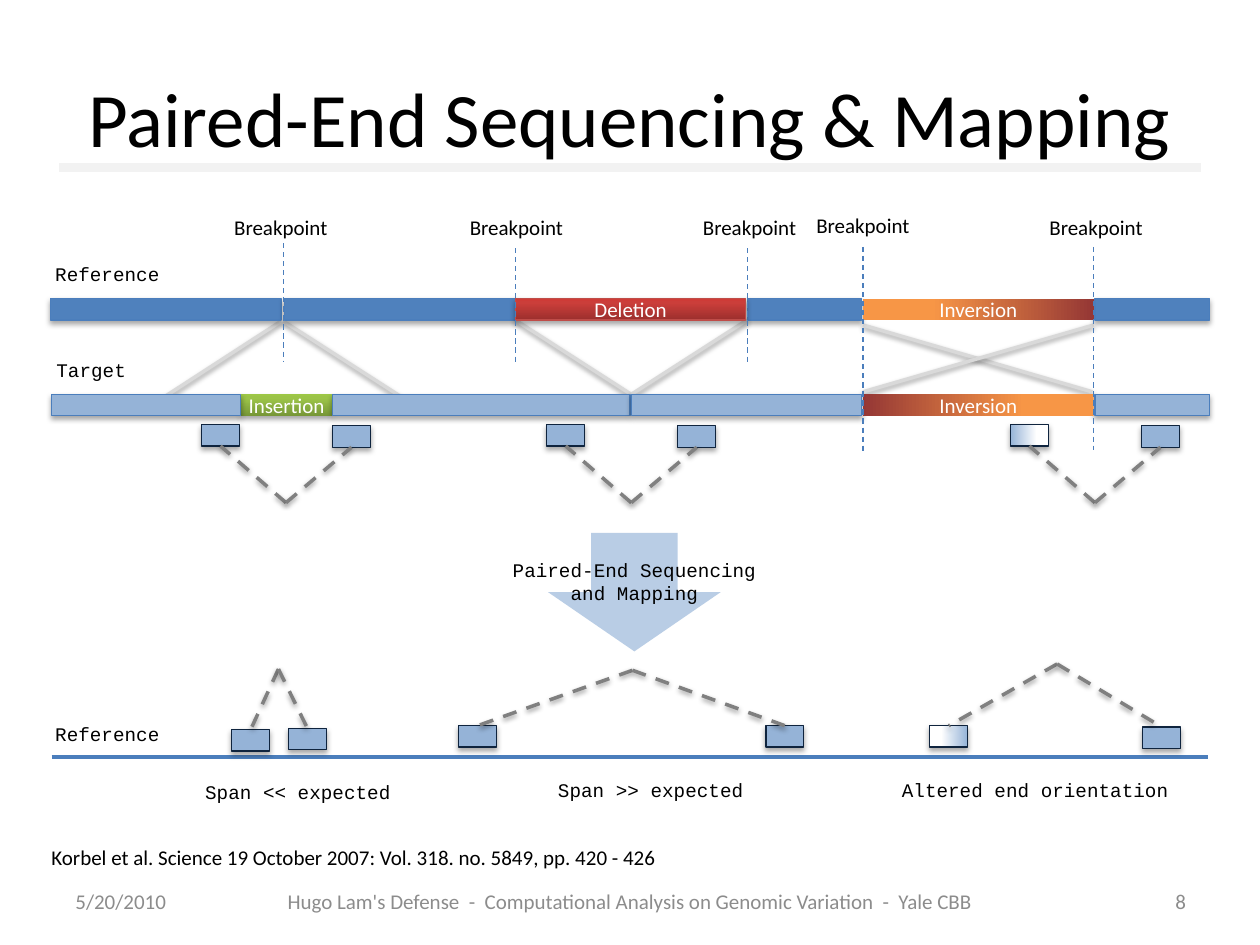
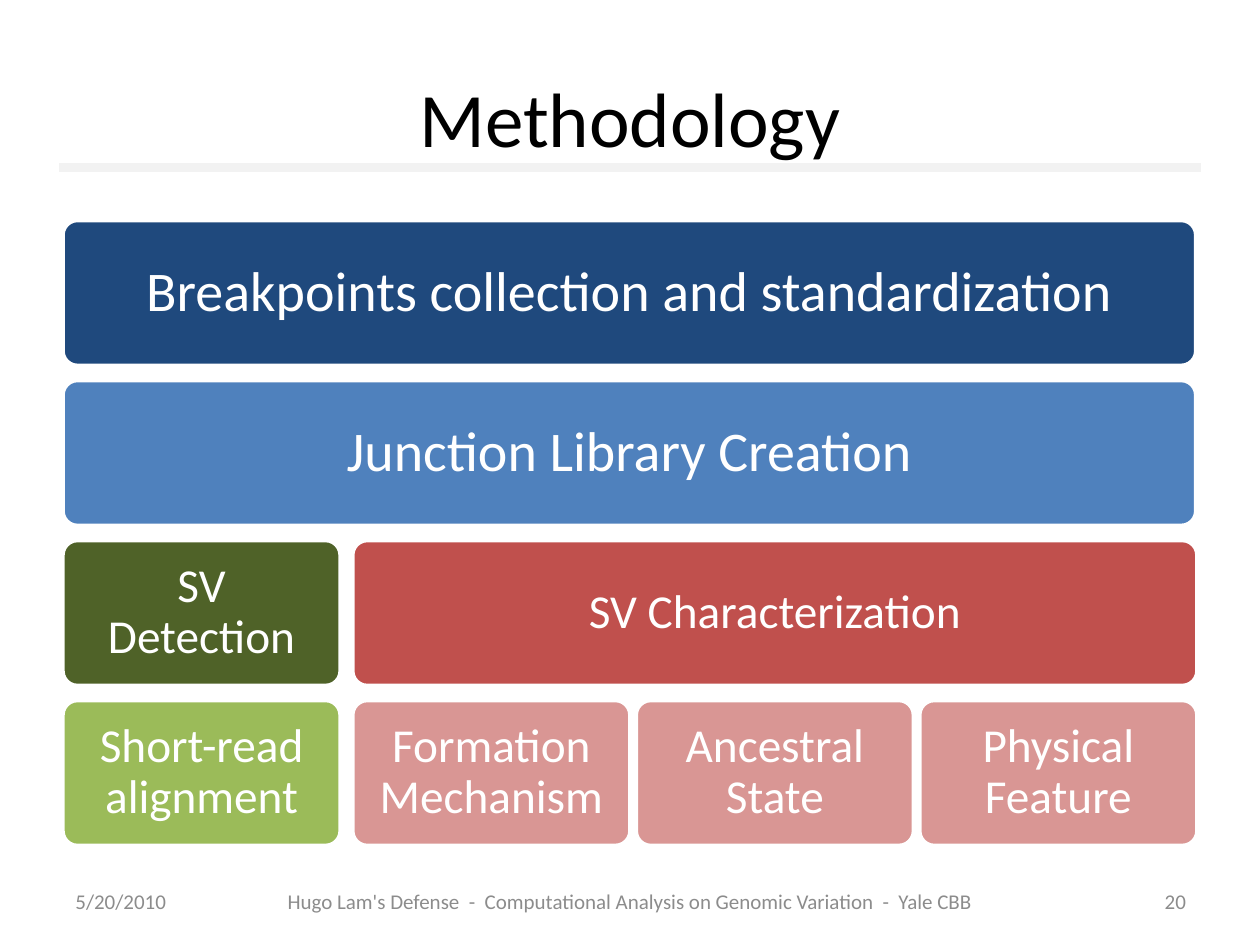
from lxml.etree import SubElement
from pptx import Presentation
from pptx.dml.color import RGBColor
from pptx.enum.dml import MSO_LINE
from pptx.enum.shapes import MSO_CONNECTOR, MSO_SHAPE
from pptx.enum.text import MSO_ANCHOR, MSO_AUTO_SIZE, PP_ALIGN
from pptx.oxml.ns import qn
from pptx.util import Inches, Pt

BLACK, WHITE, GREY = "000000", "FFFFFF", "8C8C8C"
BLUE, PALE, EDGE, NAVY = "4F81BD", "95B3D7", "4B7EBC", "0F243E"
SANS, MONO = "Calibri", "Courier New"
FOOTER = "Hugo Lam's Defense  -  Computational Analysis on Genomic Variation  -  Yale CBB"
FADE = ([(0, PALE), (70, WHITE)], 0)
FADE_BACK = (FADE[0], 180)
TURN = [(30, "F79646"), (100, "953735")]
RED = ([(0, "9C2F2D"), (80, "CB3E3A"), (100, "CE3B37")], 270)
GREEN = ([(0, "779737"), (80, "9BC348"), (100, "9DC746")], 270)
REF_Y, TARGET_Y = 2.37, 3.13
READ_W, READ_H = 0.3, 0.17


def color(text):
    return RGBColor.from_string(text)


def write(frame, text, size, font=SANS, tint=BLACK, align=PP_ALIGN.LEFT,
          anchor=MSO_ANCHOR.TOP):
    frame.vertical_anchor = anchor
    para = frame.paragraphs[0]
    para.alignment = align
    run = para.add_run()
    run.text = text
    run.font.size = Pt(size)
    run.font.name = font
    run.font.color.rgb = color(tint)
    return para


def pad(frame, side, top):
    frame.margin_left = frame.margin_right = Inches(side)
    frame.margin_top = frame.margin_bottom = Inches(top)


def shade(effects, alpha, dist):
    outer = SubElement(effects, qn("a:outerShdw"), blurRad=str(Pt(3.1)),
                       dist=str(Pt(dist)), dir="5400000", rotWithShape="0")
    tint = SubElement(outer, qn("a:srgbClr"), val=BLACK)
    SubElement(tint, qn("a:alpha"), val=str(alpha * 1000))


def paint(shape, fill):
    if isinstance(fill, str):
        shape.fill.solid()
        shape.fill.fore_color.rgb = color(fill)
        return
    stops, angle = fill
    shape.fill.gradient()
    shape.fill.gradient_angle = (360 - angle) % 360
    ramp = shape._element.spPr.find(qn("a:gradFill")).find(qn("a:gsLst"))
    for old in list(ramp):
        ramp.remove(old)
    for pos, tint in stops:
        stop = SubElement(ramp, qn("a:gs"), pos=str(pos * 1000))
        SubElement(stop, qn("a:srgbClr"), val=tint)


def block(shapes, kind, box, fill, edge=None, width=0.75, shadow=False):
    shape = shapes.add_shape(kind, *map(Inches, box))
    paint(shape, fill)
    if edge:
        shape.line.color.rgb = color(edge)
        shape.line.width = Pt(width)
    else:
        shape.line.fill.background()
    shape.shadow.inherit = False
    if shadow:
        shade(shape._element.spPr.find(qn("a:effectLst")), 35, 1.8)
    return shape


def line(shapes, start, end, tint, width, dash=False, shadow=False):
    link = shapes.add_connector(MSO_CONNECTOR.STRAIGHT,
                                *map(Inches, (*start, *end)))
    link.line.color.rgb = color(tint)
    link.line.width = Pt(width)
    if dash:
        link.line.dash_style = MSO_LINE.DASH
    effects = SubElement(link._element.spPr, qn("a:effectLst"))
    if shadow:
        shade(effects, 38, 1.6)


def label(slide, text, box, size=12, font=SANS, wrap=False,
          align=PP_ALIGN.LEFT):
    frame = slide.shapes.add_textbox(*map(Inches, box)).text_frame
    frame.word_wrap = wrap
    frame.auto_size = MSO_AUTO_SIZE.SHAPE_TO_FIT_TEXT
    write(frame, text, size, font, align=align)


def segment(slide, left, top, width, fill, edge=None, text=None,
            shadow=True):
    shape = block(slide.shapes, MSO_SHAPE.RECTANGLE,
                  (left, top, width, 0.17), fill, edge, shadow=shadow)
    if text:
        pad(shape.text_frame, 0, 0.05)
        write(shape.text_frame, text, 12, tint=WHITE,
              align=PP_ALIGN.CENTER, anchor=MSO_ANCHOR.MIDDLE)


def pair(slide, first, second, tip, fill=PALE):
    shapes = slide.shapes.add_group_shape().shapes
    for (left, top), tone in ((first, fill), (second, PALE)):
        block(shapes, MSO_SHAPE.RECTANGLE, (left, top, READ_W, READ_H),
              tone, NAVY, shadow=True)
        joint = top + READ_H if tip[1] > top else top
        line(shapes, tip, (left + READ_W / 2, joint), "808080", 2,
             dash=True, shadow=True)


def tile(slide, text, left, row, width, fill, size):
    box = (left, 1.75 + 1.27 * row, width, 1.15)
    shape = block(slide.shapes, MSO_SHAPE.ROUNDED_RECTANGLE, box, fill,
                  WHITE, 2)
    shape.adjustments[0] = 0.1
    frame = shape.text_frame
    frame.word_wrap = True
    pad(frame, size / 250, size / 250)
    para = write(frame, text, size, tint=WHITE, align=PP_ALIGN.CENTER,
                 anchor=MSO_ANCHOR.MIDDLE)
    para.line_spacing = 0.9


def start(deck, title, number):
    slide = deck.slides.add_slide(deck.slide_layouts[5])
    line(slide.shapes, (0.47, 1.33), (9.53, 1.33), "F2F2F2", 5)
    head = slide.shapes.title
    head.left, head.top, head.width, head.height = map(
        Inches, (0.5, 0.3, 9, 1.25))
    write(head.text_frame, title, 44, align=PP_ALIGN.CENTER,
          anchor=MSO_ANCHOR.MIDDLE)
    for text, left, width, align in (
            ("5/20/2010", 0.5, 1.02, PP_ALIGN.LEFT),
            (FOOTER, 1.64, 6.72, PP_ALIGN.CENTER),
            (number, 8.49, 1.02, PP_ALIGN.RIGHT)):
        box = map(Inches, (left, 6.95, width, 0.4))
        frame = slide.shapes.add_textbox(*box).text_frame
        frame.word_wrap = True
        write(frame, text, 12, tint=GREY, align=align,
              anchor=MSO_ANCHOR.MIDDLE)
    return slide


def mapping(deck):
    slide = start(deck, "Paired-End Sequencing & Mapping", "8")
    shapes = slide.shapes
    for begin, end in (((4.09, 2.54), (5.01, 3.13)),
                       ((5.93, 2.54), (5.01, 3.13)),
                       ((2.25, 2.55), (3.17, 3.14)),
                       ((2.23, 2.55), (1.32, 3.14)),
                       ((6.85, 2.58), (8.67, 3.11)),
                       ((8.68, 2.58), (6.85, 3.11))):
        line(shapes, begin, end, "D9D9D9", 2, shadow=True)
    block(shapes, MSO_SHAPE.DOWN_ARROW, (4.35, 4.23, 1.37, 0.94), "B9CDE5")
    line(shapes, (0.41, 6.01), (9.59, 6.01), EDGE, 2.25)

    for left, width in ((0.4, 1.83), (2.26, 1.83), (5.93, 0.91),
                        (8.69, 0.91)):
        segment(slide, left, REF_Y, width, BLUE, EDGE)
    segment(slide, 1.91, TARGET_Y, 0.73, GREEN, text="Insertion")
    for left, width in ((0.41, 1.5), (2.64, 2.36), (5.01, 1.83),
                        (8.69, 0.91)):
        segment(slide, left, TARGET_Y, width, PALE, EDGE)
    segment(slide, 4.09, REF_Y, 1.83, RED, "BF4C48", "Deletion")
    for top, angle in ((REF_Y, 0), (TARGET_Y, 180)):
        segment(slide, 6.85, top, 1.83, (TURN, angle), text="Inversion",
                shadow=False)

    for x, top, end, left, y in ((2.25, 1.93, 2.87, 1.76, 1.65),
                                 (4.09, 1.97, 2.9, 3.63, 1.65),
                                 (5.93, 1.97, 2.9, 5.48, 1.65),
                                 (6.85, 1.96, 3.58, 6.38, 1.64),
                                 (8.68, 1.96, 3.57, 8.23, 1.65)):
        line(shapes, (x, top), (x, end), EDGE, 0.75, dash=True)
        label(slide, "Breakpoint", (left, y, 0.95, 0.3))

    for left, fill in ((1.6, PALE), (4.34, PALE), (8.02, FADE)):
        pair(slide, (left, 3.37), (left + 1.04, 3.38),
             (left + 0.67, 3.99), fill)
    pair(slide, (1.84, 5.79), (2.29, 5.78), (2.21, 5.31))
    pair(slide, (3.64, 5.76), (6.08, 5.76), (5.02, 5.32))
    pair(slide, (7.38, 5.76), (9.07, 5.77), (8.39, 5.27), FADE_BACK)

    for text, left, top, width in (
            ("Reference", 0.34, 2.03, 1.04),
            ("Target", 0.35, 2.79, 0.76),
            ("Reference", 0.34, 5.68, 1.04),
            ("Span << expected", 1.53, 6.14, 1.69),
            ("Span >> expected", 4.33, 6.13, 1.69),
            ("Altered end orientation", 7.06, 6.13, 2.33)):
        label(slide, text, (left, top, width, 0.29), 11, MONO)
    label(slide, "Paired-End Sequencing and Mapping",
          (3.84, 4.38, 2.39, 0.47), 11, MONO, True, PP_ALIGN.CENTER)
    label(slide, "Korbel et al. Science 19 October 2007: Vol. 318. "
          "no. 5849, pp. 420 - 426", (0.31, 6.65, 5.06, 0.3))


def method(deck):
    slide = start(deck, "Methodology", "20")
    tile(slide, "Breakpoints collection and standardization",
         0.5, 0, 8.99, "1F497D", 32)
    tile(slide, "Junction Library Creation", 0.5, 1, 8.99, BLUE, 32)
    tile(slide, "SV Detection", 0.5, 2, 2.2, "4F6228", 27)
    tile(slide, "SV Characterization", 2.8, 2, 6.7, "C0504D", 27)
    tile(slide, "Short-read alignment", 0.5, 3, 2.2, "9BBB59", 27)
    for step, text in enumerate(("Formation Mechanism", "Ancestral State",
                                 "Physical Feature")):
        tile(slide, text, 2.8 + 2.25 * step, 3, 2.2, "D99694", 27)


def main():
    deck = Presentation()
    deck.slide_width, deck.slide_height = Inches(10), Inches(7.5)
    mapping(deck)
    method(deck)
    deck.save("out.pptx")


if __name__ == "__main__":
    main()
